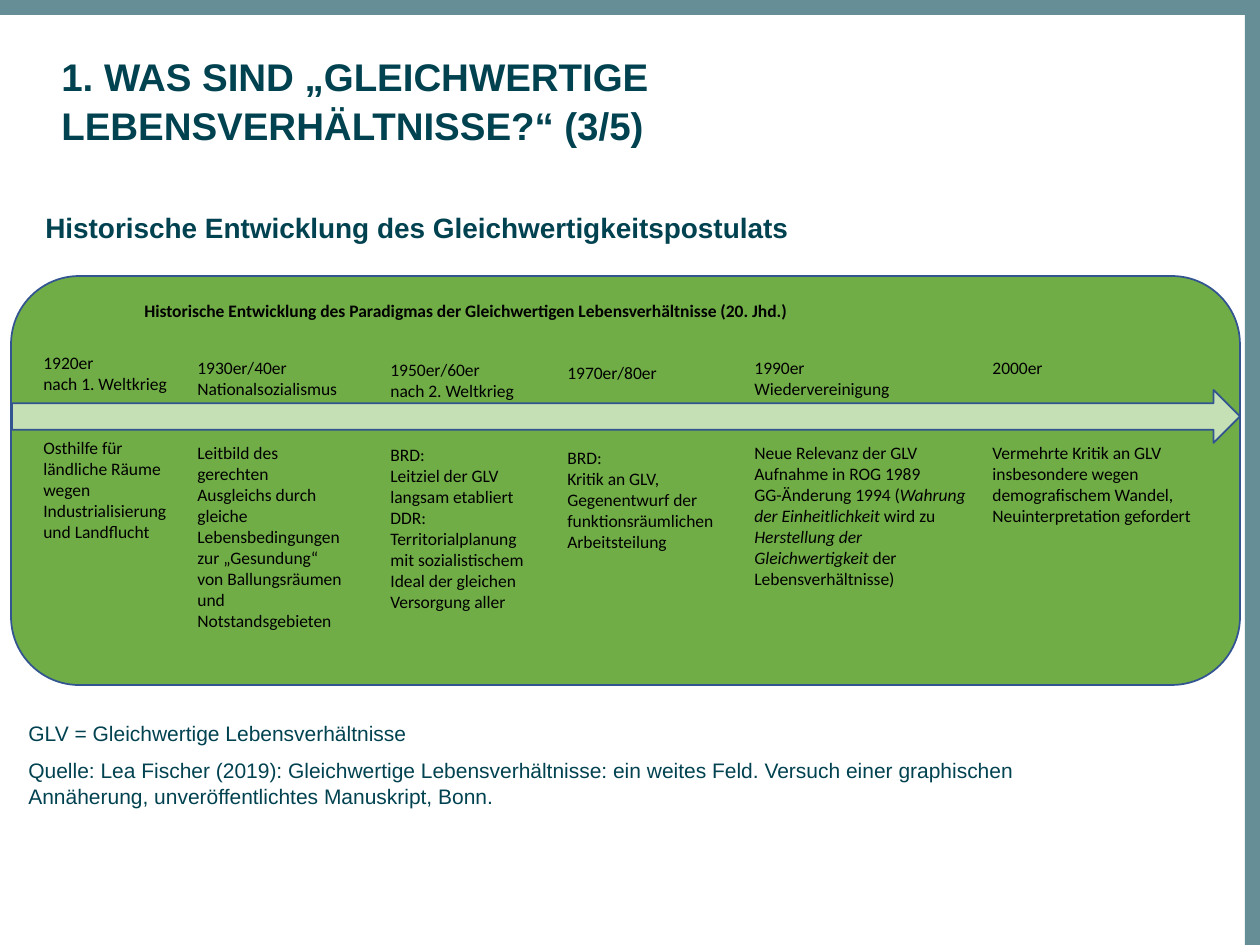
from pptx import Presentation
from pptx.dml.color import RGBColor
from pptx.enum.shapes import MSO_SHAPE as SHAPE
from pptx.enum.text import MSO_AUTO_SIZE as AUTO
from pptx.util import Emu, Pt

COLORS = {"bar": "668E96", "heading": "004250", "panel": "70AD47",
          "arrow": "C5E0B4", "line": "325491", "text": "000000"}
W, H = 1260, 945
LINE_PT = 12.2
HEADER_ROWS = 4

PERIODS = [
    ((20, 70, 151, 224), ["1920er", "nach 1. Weltkrieg"],
     ["Osthilfe für ländliche Räume wegen Industrialisierung und Landflucht"]),
    ((174, 75, 170, 310), ["1930er/40er", "Nationalsozialismus"],
     ["Leitbild des gerechten Ausgleichs durch gleiche Lebensbedingungen "
      "zur „Gesundung“ von Ballungsräumen und Notstandsgebieten"]),
    ((367, 77, 170, 289), ["1950er/60er", "nach 2. Weltkrieg"],
     ["BRD:", "Leitziel der GLV langsam etabliert",
      "DDR: Territorialplanung mit sozialistischem Ideal der gleichen Versorgung aller"]),
    ((544, 80, 176, 204), ["1970er/80er"],
     ["BRD:", "Kritik an GLV, Gegenentwurf der funktionsräumlichen Arbeitsteilung"]),
    ((731, 75, 236, 267), ["1990er", "Wiedervereinigung"],
     ["Neue Relevanz der GLV", "Aufnahme in ROG 1989",
      ["GG-Änderung 1994 (", "Wahrung der Einheitlichkeit ", "wird zu ",
       "Herstellung der Gleichwertigkeit ", "der Lebensverhältnisse)"]]),
    ((969, 75, 244, 204), ["2000er"],
     ["Vermehrte Kritik an GLV insbesondere wegen demografischem Wandel, "
      "Neuinterpretation gefordert"]),
]


def px(n):
    return Emu(round(n * 914400 / 126))


def rgb(name):
    return RGBColor.from_string(COLORS[name])


def add_block(s, kind, box, fill, line=None):
    sp = s.shapes.add_shape(kind, *map(px, box))
    sp.shadow.inherit = False
    sp.fill.solid()
    sp.fill.fore_color.rgb = rgb(fill)
    if line:
        sp.line.color.rgb = rgb(line)
        sp.line.width = Pt(1)
    else:
        sp.line.fill.background()


def add_text(s, box, paragraphs, size, font="Arial", color="heading", bold=False,
             spacing=1.05, after=0, auto=AUTO.NONE):
    tf = s.shapes.add_textbox(*map(px, box)).text_frame
    tf.word_wrap = True
    tf.auto_size = auto
    for i, parts in enumerate(paragraphs):
        p = tf.add_paragraph() if i else tf.paragraphs[0]
        p.line_spacing = spacing
        p.space_after = Pt(after)
        for j, text in enumerate([parts] if isinstance(parts, str) else parts):
            r = p.add_run()
            r.text = text
            r.font.name, r.font.size = font, Pt(size)
            r.font.bold, r.font.italic = bold, j % 2 == 1
            r.font.color.rgb = rgb(color)
    return tf


def add_label(s, box, paragraphs, bold=False):
    return add_text(s, box, paragraphs, 10, "Calibri", "text", bold,
                    spacing=1, auto=AUTO.SHAPE_TO_FIT_TEXT)


def add_frame(s, x, y, w, h):
    add_block(s, SHAPE.RECTANGLE, (x + w - 15, y, 15, h), "bar")
    add_block(s, SHAPE.RECTANGLE, (x, y, w, 15), "bar")


def add_headings(s, x, y, w):
    add_text(s, (x + 16, y, w - 67, 144),
             ["1. WAS SIND „GLEICHWERTIGE LEBENSVERHÄLTNISSE?“ (3/5)"], 22, bold=True)
    add_text(s, (x, y + 158, w, 112),
             ["Historische Entwicklung des Gleichwertigkeitspostulats"], 16, bold=True, after=6)


def add_timeline(s, x, y, w, h):
    add_block(s, SHAPE.ROUNDED_RECTANGLE, (x, y, w, h), "panel", "line")
    add_block(s, SHAPE.RIGHT_ARROW, (x + 1, y + 114, w - 1, 53), "arrow", "line")
    for (dx, dy, pw, ph), header, body in PERIODS:
        tf = add_label(s, (x + dx, y + dy, pw, ph), header + body)
        gap = (HEADER_ROWS - len(header)) * LINE_PT
        tf.paragraphs[len(header)].space_before = Pt(gap)
    add_label(s, (x + 121, y + 18, 753, 34),
              ["Historische Entwicklung des Paradigmas der Gleichwertigen "
               "Lebensverhältnisse (20. Jhd.)"], bold=True)


def add_source(s, x, y, w, h):
    add_text(s, (x, y, w, h),
             ["GLV = Gleichwertige Lebensverhältnisse",
              "Quelle: Lea Fischer (2019): Gleichwertige Lebensverhältnisse: ein weites Feld. "
              "Versuch einer graphischen Annäherung, unveröffentlichtes Manuskript, Bonn."],
             12, after=6)


def main():
    prs = Presentation()
    prs.slide_width, prs.slide_height = px(W), px(H)
    s = prs.slides.add_slide(prs.slide_layouts[6])
    add_frame(s, 0, 0, W, H)
    add_headings(s, 33, 45, 1033)
    add_timeline(s, 11, 276, 1229, 409)
    add_source(s, 16, 713, 1033, 112)
    prs.save("out.pptx")


if __name__ == "__main__":
    main()
